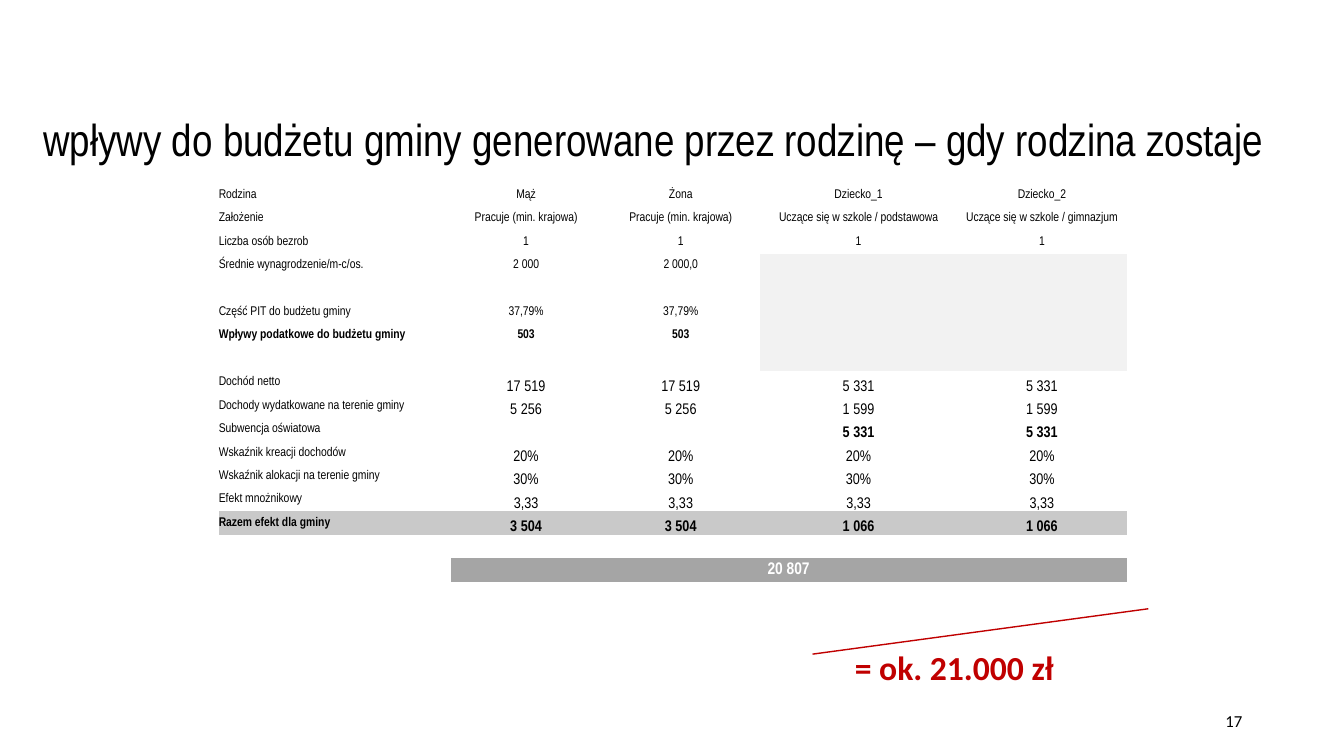
from lxml.etree import SubElement
from pptx import Presentation
from pptx.dml.color import RGBColor
from pptx.enum.shapes import MSO_CONNECTOR as Connector
from pptx.enum.text import MSO_ANCHOR as Anchor, PP_ALIGN as Align
from pptx.oxml.ns import qn
from pptx.util import Inches, Pt

SLIDE_WIDTH, SLIDE_HEIGHT = Inches(13.33), Inches(7.5)
NARROW, SANS = "Arial Narrow", "Calibri"
NO_GRID_STYLE = "{2D5ABB26-0587-4C30-8999-92F81FD0307C}"
COLUMN_WEIGHTS = [2.3, 1.54, 1.54, 1.99, 1.64]
COLUMN_WEIGHTS = [2.3, 1.5, 1.57, 1.96, 1.68]
ROWS = [
    ["Rodzina", "Mąż", "Żona", "Dziecko_1", "Dziecko_2"],
    ["Założenie", "Pracuje (min. krajowa)", "Pracuje (min. krajowa)",
     "Uczące się w szkole / podstawowa", "Uczące się w szkole / gimnazjum"],
    ["Liczba osób bezrob", "1", "1", "1", "1"],
    ["Średnie wynagrodzenie/m-c/os.", "2 000", "2 000,0", "", ""],
    [""] * 5,
    ["Część PIT do budżetu gminy", "37,79%", "37,79%", "", ""],
    ["Wpływy podatkowe do budżetu gminy", "503", "503", "", ""],
    [""] * 5,
    ["Dochód netto", "17 519", "17 519", "5 331", "5 331"],
    ["Dochody wydatkowane na terenie gminy", "5 256", "5 256", "1 599", "1 599"],
    ["Subwencja oświatowa", "", "", "5 331", "5 331"],
    ["Wskaźnik kreacji dochodów"] + ["20%"] * 4,
    ["Wskaźnik alokacji na terenie gminy"] + ["30%"] * 4,
    ["Efekt mnożnikowy"] + ["3,33"] * 4,
    ["Razem efekt dla gminy", "3 504", "3 504", "1 066", "1 066"],
    [""] * 5,
    ["", "20 807", "", "", ""],
]
TAX_ROW, NET_ROW, SUBSIDY_ROW, SUM_ROW, TOTAL_ROW = 6, 8, 10, 14, 16
BLANK_ROWS = range(3, 8)


def color(value):
    """Turn a hex string into a colour."""
    return RGBColor.from_string(value)


def place(left, top, width, height):
    """Turn percentages of the slide into lengths."""
    return (int(SLIDE_WIDTH * left / 100), int(SLIDE_HEIGHT * top / 100),
            int(SLIDE_WIDTH * width / 100), int(SLIDE_HEIGHT * height / 100))


def apply(target, values):
    """Set every attribute named in a dict."""
    for name, value in values.items():
        setattr(target, name, value)


def write(para, text, align, size, font=NARROW, ink="000000", bold=False):
    """Write one formatted run into a paragraph."""
    para.alignment = align
    span = para.add_run()
    span.text = text
    apply(span.font, {"name": font, "size": Pt(size), "bold": bold})
    span.font.color.rgb = color(ink)


def add_title(page, box, text):
    """Move and fill the title placeholder."""
    title = page.shapes.title
    apply(title, dict(zip(("left", "top", "width", "height"), box)))
    apply(title.text_frame, {"vertical_anchor": Anchor.BOTTOM, "word_wrap": True})
    para = title.text_frame.paragraphs[0]
    para.line_spacing = 0.9
    write(para, text, Align.CENTER, 32)


def add_label(page, box, text, anchor, align, size, **style):
    """Add a one-line text box."""
    frame = page.shapes.add_textbox(*box).text_frame
    apply(frame, {"vertical_anchor": anchor, "word_wrap": True})
    write(frame.paragraphs[0], text, align, size, SANS, **style)


def add_rule(page, box):
    """Draw a rising line across the box."""
    left, top, width, height = box
    rule = page.shapes.add_connector(
        Connector.STRAIGHT, left, top + height, left + width, top)
    rule.line.color.rgb = color("C00000")
    rule.line.width = Pt(1)
    SubElement(rule._element.spPr, qn("a:effectLst"))


def cell_fill(row, column):
    """Choose the fill of a table cell."""
    if row in BLANK_ROWS and column > 2:
        return "F2F2F2"
    if row == SUM_ROW:
        return "C9C9C9"
    return "A5A5A5" if row == TOTAL_ROW and column else None


def format_cell(cell, row, column, text):
    """Fill one table cell and write its text."""
    figure = column > 0 and NET_ROW <= row <= SUM_ROW
    apply(cell, {"margin_left": 0, "margin_right": 0, "margin_top": 0, "margin_bottom": 0,
                 "vertical_anchor": Anchor.BOTTOM if figure else Anchor.MIDDLE})
    fill = cell_fill(row, column)
    if fill:
        cell.fill.solid()
        cell.fill.fore_color.rgb = color(fill)
    else:
        cell.fill.background()
    para = cell.text_frame.paragraphs[0]
    if not text:
        SubElement(para._p, qn("a:endParaRPr"), sz="900")
        return
    total = row == TOTAL_ROW
    bold = row in (TAX_ROW, SUM_ROW, TOTAL_ROW) or (row == SUBSIDY_ROW and figure)
    write(para, text, Align.CENTER if column else Align.LEFT,
          12 if total else 11 if figure else 9,
          ink="FFFFFF" if total else "000000", bold=bold)


def add_budget_table(page, box):
    """Add the table of family income and its effect."""
    table = page.shapes.add_table(len(ROWS), len(COLUMN_WEIGHTS), *box).table
    apply(table, {"first_row": False, "horz_banding": False})
    table._tbl.tblPr[0].text = NO_GRID_STYLE
    for column, weight in zip(table.columns, COLUMN_WEIGHTS):
        column.width = int(box[2] * weight / sum(COLUMN_WEIGHTS))
    for row, texts in enumerate(ROWS):
        table.rows[row].height = box[3] // len(ROWS)
        for column, text in enumerate(texts):
            format_cell(table.cell(row, column), row, column, text)
    table.cell(TOTAL_ROW, 1).merge(table.cell(TOTAL_ROW, 4))


def main():
    """Build and save the deck."""
    deck = Presentation()
    apply(deck, {"slide_width": SLIDE_WIDTH, "slide_height": SLIDE_HEIGHT})
    page = deck.slides.add_slide(deck.slide_layouts[5])
    add_label(page, place(70.67, 92.67, 22.5, 5.33), "17", Anchor.MIDDLE, Align.RIGHT, 12)
    add_label(page, place(62.87, 84.93, 24.6, 6.67), "= ok. 21.000 zł",
              Anchor.TOP, Align.LEFT, 24, ink="C00000", bold=True)
    add_title(page, place(2.03, 13.73, 93.25, 8.93),
              "wpływy do budżetu gminy generowane przez rodzinę – gdy rodzina zostaje")
    add_rule(page, place(60.46, 80.53, 24.98, 6))
    add_budget_table(page, place(16.28, 24.27, 67.55, 52.67))
    deck.save("out.pptx")


if __name__ == "__main__":
    main()
